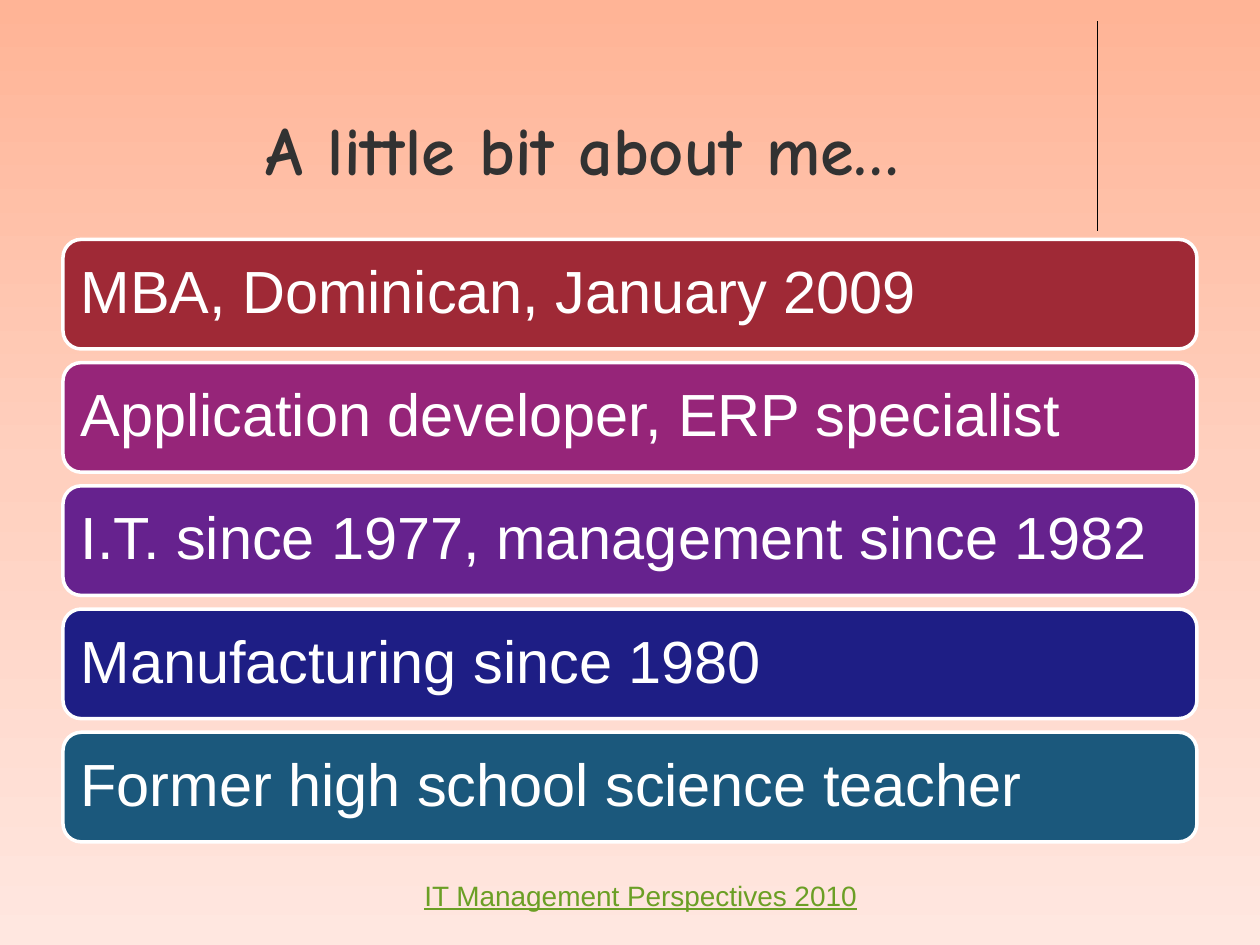
import copy

import pptx
import pptx.dml.color
import pptx.enum.shapes
import pptx.enum.text
import pptx.oxml
import pptx.oxml.ns
import pptx.util
from pptx.dml.color import RGBColor
from pptx.util import Inches

WHITE = RGBColor(0xFF, 0xFF, 0xFF)
BLACK = RGBColor(0x00, 0x00, 0x00)
CHARCOAL = RGBColor(0x32, 0x32, 0x32)
LINK_GREEN = RGBColor(0x6B, 0x9F, 0x25)
PEACH = [
    RGBColor(0xFF, 0xB4, 0x96),
    RGBColor(0xFF, 0xD0, 0xBF),
    RGBColor(0xFF, 0xE7, 0xE0),
]
FACTS = [
    ("MBA, Dominican, January 2009", RGBColor(0x9F, 0x29, 0x36)),
    ("Application developer, ERP specialist", RGBColor(0x96, 0x25, 0x79)),
    ("I.T. since 1977, management since 1982", RGBColor(0x66, 0x22, 0x8E)),
    ("Manufacturing since 1980", RGBColor(0x1E, 0x1E, 0x85)),
    ("Former high school science teacher", RGBColor(0x1B, 0x58, 0x7C)),
]
BAR_TOP, BAR_HEIGHT, BAR_STEP = 1.9, 0.87, 0.978

TITLE_FONT = {"name": "Comic Neue", "size": pptx.util.Pt(39), "bold": True}
FACT_FONT = {"name": "Arial", "size": pptx.util.Pt(34)}
FOOTER_FONT = {"name": "Arial", "size": pptx.util.Pt(16), "underline": True}


def write(shape, text, font_format, color, align, anchor):
    frame = shape.text_frame
    frame.word_wrap = True
    frame.vertical_anchor = anchor
    paragraph = frame.paragraphs[0]
    paragraph.alignment = align
    run = paragraph.add_run()
    run.text = text
    for attribute, value in font_format.items():
        setattr(run.font, attribute, value)
    run.font.color.rgb = color
    return paragraph


ALIGN = pptx.enum.text.PP_ALIGN
ANCHOR = pptx.enum.text.MSO_ANCHOR

deck = pptx.Presentation()
deck.slide_width, deck.slide_height = Inches(10), Inches(7.5)
slide = deck.slides.add_slide(deck.slide_layouts[6])

# Background: three peach stops from top to bottom
backdrop = slide.background.fill
backdrop.gradient()
backdrop.gradient_angle = 270
stop_list = slide.element.find(".//" + pptx.oxml.ns.qn("a:gsLst"))
stop_list.insert(1, copy.deepcopy(stop_list[0]))
for index, (stop, color) in enumerate(zip(backdrop.gradient_stops, PEACH)):
    stop.position = index / 2
    stop.color.rgb = color

# Vertical rule beside the title
rule = slide.shapes.add_connector(
    pptx.enum.shapes.MSO_CONNECTOR.STRAIGHT,
    Inches(8.71), Inches(0.17), Inches(8.71), Inches(1.83),
)
rule.line.color.rgb = BLACK
rule.line.width = pptx.util.Pt(0.75)
rule.element.spPr.append(pptx.oxml.parse_xml(
    f"<a:effectLst {pptx.oxml.ns.nsdecls('a')}/>"
))

title = slide.shapes.add_textbox(Inches(0.5), Inches(0.13), Inches(8.25), Inches(1.42))
write(title, "A little bit about me…", TITLE_FONT, CHARCOAL, ALIGN.CENTER, ANCHOR.BOTTOM)

# One rounded bar per fact
for index, (fact, color) in enumerate(FACTS):
    bar = slide.shapes.add_shape(
        pptx.enum.shapes.MSO_SHAPE.ROUNDED_RECTANGLE,
        Inches(0.5), Inches(BAR_TOP + index * BAR_STEP), Inches(9), Inches(BAR_HEIGHT),
    )
    bar.shadow.inherit = False
    bar.fill.solid()
    bar.fill.fore_color.rgb = color
    bar.line.color.rgb = WHITE
    bar.line.width = pptx.util.Pt(2)
    paragraph = write(bar, fact, FACT_FONT, WHITE, ALIGN.LEFT, ANCHOR.MIDDLE)
    paragraph.line_spacing = 0.9

footer = slide.shapes.add_textbox(Inches(2.92), Inches(6.92), Inches(4.33), Inches(0.42))
write(footer, "IT Management Perspectives 2010", FOOTER_FONT, LINK_GREEN, ALIGN.CENTER, ANCHOR.TOP)

deck.save("out.pptx")
